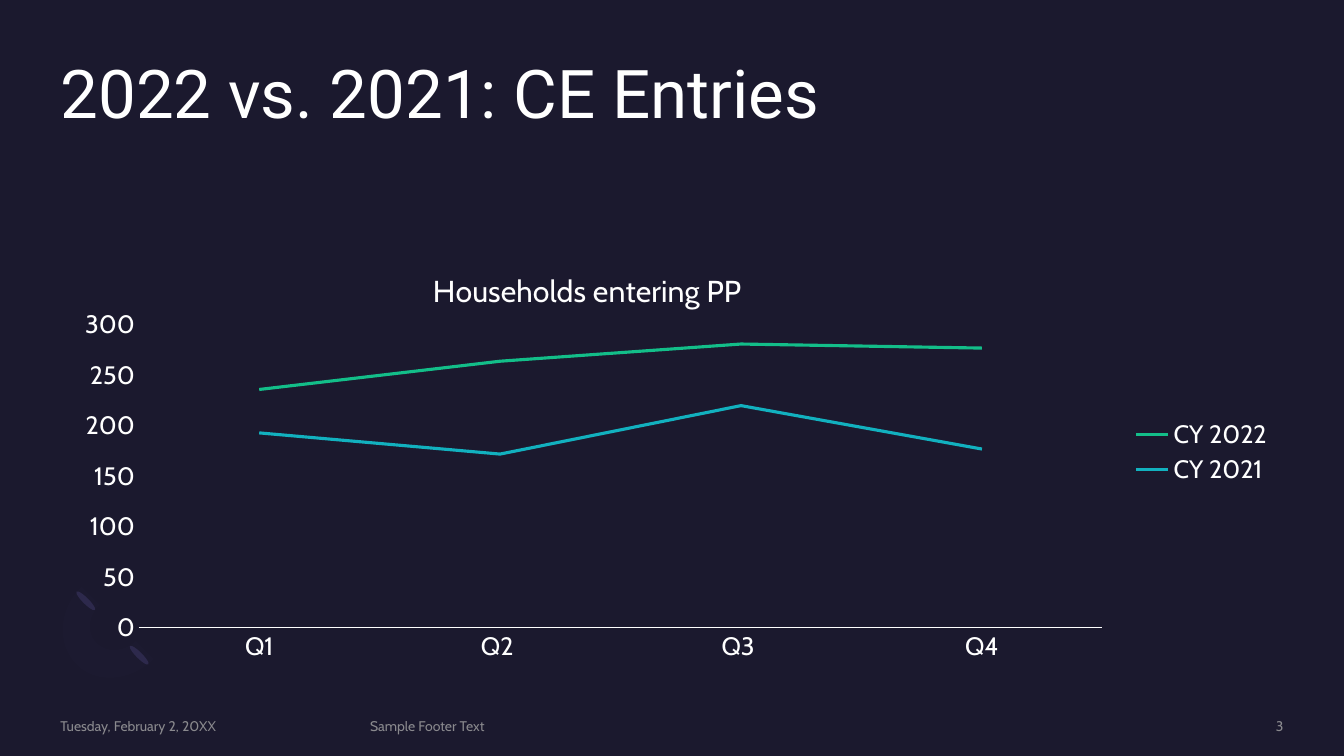
import pptx
import pptx.chart.data
import pptx.dml.color
import pptx.enum.chart
import pptx.enum.shapes
import pptx.enum.text
import pptx.oxml
import pptx.oxml.ns
import pptx.util
from pptx.util import Inches

RGBColor = pptx.dml.color.RGBColor
NAVY = RGBColor(0x1B, 0x19, 0x2E)
PETAL = RGBColor(0x2C, 0x28, 0x4A)
LILAC = RGBColor(0x77, 0x71, 0xB2)
WHITE = RGBColor(0xFF, 0xFF, 0xFF)
GREY = RGBColor(0xA6, 0xA6, 0xA6)
GREEN = RGBColor(0x13, 0xBE, 0x89)
TEAL = RGBColor(0x12, 0xB1, 0xBF)

QUARTERS = ["Q1", "Q2 ", "Q3 ", "Q4"]
ENTRIES = [
    ("CY 2022", [236, 264, 281, 277], GREEN),
    ("CY 2021", [193, 172, 220, 177], TEAL),
]
FOOTERS = [
    ("Tuesday, February 2, 20XX", 0.6, 2.88, pptx.enum.text.PP_ALIGN.LEFT),
    ("Sample Footer Text", 3.67, 6.98, pptx.enum.text.PP_ALIGN.LEFT),
    ("3", 10.88, 1.85, pptx.enum.text.PP_ALIGN.RIGHT),
]
RING_OUTER = [
    [(0.76, 6.59), (0.56, 6.39), (0.58, 6.05), (0.81, 5.82)],
    [(1.52, 6.54), (1.3, 6.76), (0.95, 6.79), (0.76, 6.59)],
]
RING_INNER = [
    [(0.99, 6), (0.87, 6.11), (0.86, 6.29), (0.96, 6.38)],
    [(0.96, 6.38), (1.06, 6.48), (1.23, 6.47), (1.35, 6.36)],
]
FRAME = {"margin_left": 0, "margin_top": 0, "margin_right": 0, "margin_bottom": 0, "word_wrap": True}


def set_format(target, values):
    for name, value in values.items():
        setattr(target, name, value)


def set_font(font, size, color, name="Cabin"):
    set_format(font, {"size": pptx.util.Pt(size), "name": name, "bold": False})
    font.color.rgb = color


def set_alpha(fill_owner, percent):
    for color in fill_owner.iter(pptx.oxml.ns.qn("a:srgbClr")):
        alpha = color.makeelement(pptx.oxml.ns.qn("a:alpha"), {"val": str(percent * 1000)})
        color.append(alpha)


def paint(shape, color):
    shape.shadow.inherit = False
    shape.fill.solid()
    shape.fill.fore_color.rgb = color
    shape.line.fill.background()


def add_petal(slide, left, top):
    petal = slide.shapes.add_shape(
        pptx.enum.shapes.MSO_SHAPE.OVAL, Inches(left), Inches(top), Inches(0.06), Inches(0.26))
    petal.rotation = 135
    paint(petal, PETAL)


def curve_points(controls, steps=12):
    points = []
    for step in range(steps + 1):
        t = step / steps
        weights = [(1 - t) ** 3, 3 * t * (1 - t) ** 2, 3 * t * t * (1 - t), t ** 3]
        points.append(tuple(
            Inches(sum(weight * point[axis] for weight, point in zip(weights, controls)))
            for axis in (0, 1)))
    return points


def add_ring(slide):
    curves = [RING_OUTER[0], *RING_INNER, RING_OUTER[1]]
    points = [point for controls in curves for point in curve_points(controls)]
    builder = slide.shapes.build_freeform(*points[0])
    builder.add_line_segments(points[1:], close=True)
    ring = builder.convert_to_shape()
    paint(ring, LILAC)
    set_alpha(ring._element.spPr, 2)


def add_title(slide, text):
    title = slide.shapes.title
    set_format(title, {"left": Inches(0.6), "top": Inches(0.6),
                       "width": Inches(12.13), "height": Inches(1.46)})
    frame = title.text_frame
    set_format(frame, FRAME)
    frame.vertical_anchor = pptx.enum.text.MSO_ANCHOR.TOP
    para = frame.paragraphs[0]
    set_format(para, {"alignment": pptx.enum.text.PP_ALIGN.LEFT, "line_spacing": 0.9})
    span = para.add_run()
    span.text = text
    set_font(span.font, 48, WHITE, "Roboto")


def add_footer(slide, text, left, width, alignment):
    box = slide.shapes.add_textbox(Inches(left), Inches(7.12), Inches(width), Inches(0.17))
    set_format(box.text_frame, FRAME)
    box.text_frame.vertical_anchor = pptx.enum.text.MSO_ANCHOR.MIDDLE
    para = box.text_frame.paragraphs[0]
    para.alignment = alignment
    span = para.add_run()
    span.text = text
    set_font(span.font, 10, GREY)
    set_alpha(span.font._element, 80)


def make_layout(**values):
    items = "".join(f'<c:{name} val="{value}"/>' for name, value in values.items())
    return pptx.oxml.parse_xml(
        f'<c:layout {pptx.oxml.ns.nsdecls("c")}><c:manualLayout>{items}</c:manualLayout></c:layout>')


def place_part(part, layout, position):
    for old in part.findall(pptx.oxml.ns.qn("c:layout")):
        part.remove(old)
    part.insert(position, layout)


def format_axes(chart):
    for axis in (chart.category_axis, chart.value_axis):
        set_format(axis, {"major_tick_mark": pptx.enum.chart.XL_TICK_MARK.NONE,
                          "minor_tick_mark": pptx.enum.chart.XL_TICK_MARK.NONE,
                          "has_major_gridlines": False})
        set_font(axis.tick_labels.font, 18, WHITE)
    set_format(chart.value_axis, {"minimum_scale": 0, "maximum_scale": 300, "major_unit": 50})
    chart.value_axis.format.line.fill.background()
    line = chart.category_axis.format.line
    line.color.rgb = WHITE
    line.width = pptx.util.Pt(0.75)


def add_entries_chart(slide):
    data = pptx.chart.data.CategoryChartData()
    data.categories = QUARTERS
    for name, values, _ in ENTRIES:
        data.add_series(name, values)
    chart = slide.shapes.add_chart(
        pptx.enum.chart.XL_CHART_TYPE.LINE, Inches(0.6), Inches(2.31),
        Inches(12.13), Inches(4.35), data).chart
    set_font(chart.font, 18, WHITE)
    format_axes(chart)
    chart.plots[0].vary_by_categories = False
    for series, (_, _, color) in zip(chart.plots[0].series, ENTRIES):
        series.smooth = False
        series.marker.style = pptx.enum.chart.XL_MARKER_STYLE.NONE
        series.format.line.color.rgb = color
        series.format.line.width = pptx.util.Pt(2.25)
    chart.has_title = True
    span = chart.chart_title.text_frame.paragraphs[0].add_run()
    span.text = "Households entering PP"
    set_font(span.font, 21.6, WHITE)
    place_part(chart.chart_title._element,
               make_layout(xMode="edge", yMode="edge", x=0.3, y=0.07), 1)
    place_part(chart._chartSpace.chart.plotArea,
               make_layout(layoutTarget="inner", xMode="edge", yMode="edge",
                           x=0.064, y=0.21, w=0.788, h=0.691), 0)
    chart.has_legend = True
    set_format(chart.legend, {"position": pptx.enum.chart.XL_LEGEND_POSITION.RIGHT,
                              "include_in_layout": False})
    set_font(chart.legend.font, 18, WHITE)


def main():
    deck = pptx.Presentation()
    set_format(deck, {"slide_width": Inches(13.33), "slide_height": Inches(7.5)})
    page = deck.slides.add_slide(deck.slide_layouts[5])
    page.background.fill.solid()
    page.background.fill.fore_color.rgb = NAVY
    for left, top in [(1.35, 6.37), (0.82, 5.83)]:
        add_petal(page, left, top)
    add_ring(page)
    add_title(page, "2022 vs. 2021: CE Entries")
    for footer in FOOTERS:
        add_footer(page, *footer)
    add_entries_chart(page)
    deck.save("out.pptx")


if __name__ == "__main__":
    main()
